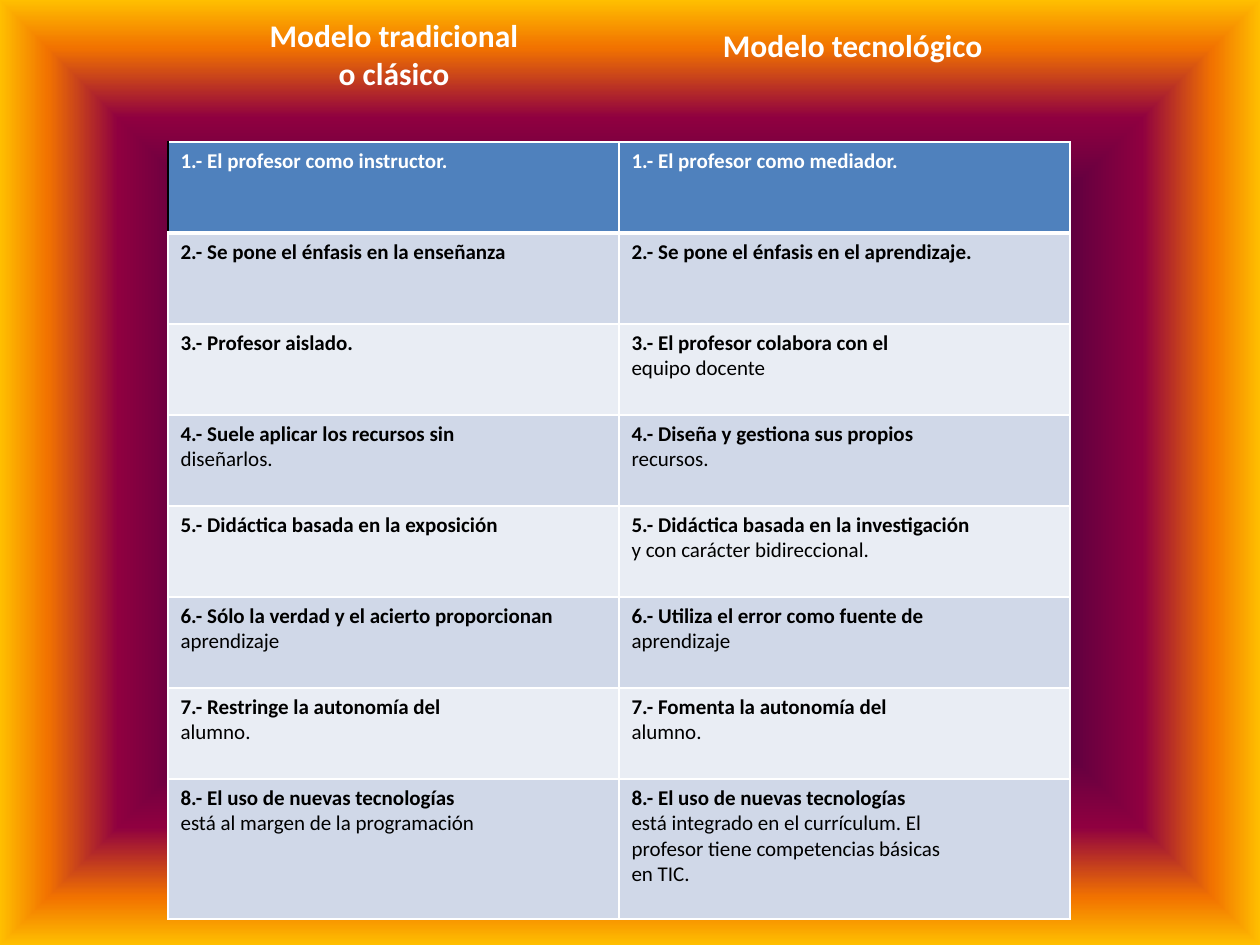
import pptx
import pptx.util
import pptx.dml.color
import pptx.enum.text
import pptx.oxml
import pptx.oxml.ns

HUES = {
    "white": "FFFFFF",
    "black": "000000",
    "head": "4F81BD",
    "dark": "D0D8E8",
    "light": "E9EDF4",
}
STOPS = [(0, "000000"), (20, "000040"), (50, "400040"),
         (75, "8F0040"), (90, "F27300"), (100, "FFBF00")]
TITLES = [
    (["Modelo tradicional", "o clásico"], (168, 10, 452, 89), "CENTER"),
    (["Modelo tecnológico"], (601, 20, 394, 50), "RIGHT"),
]
ROWS = [
    (["1.- El profesor como instructor."],
     ["1.- El profesor como mediador."]),
    (["2.- Se pone el énfasis en la enseñanza"],
     ["2.- Se pone el énfasis en el aprendizaje."]),
    (["3.- Profesor aislado."],
     ["3.- El profesor colabora con el", "equipo docente"]),
    (["4.- Suele aplicar los recursos sin", "diseñarlos."],
     ["4.- Diseña y gestiona sus propios", "recursos."]),
    (["5.- Didáctica basada en la exposición"],
     ["5.- Didáctica basada en la investigación",
      "y con carácter bidireccional."]),
    (["6.- Sólo la verdad y el acierto proporcionan", "aprendizaje"],
     ["6.- Utiliza el error como fuente de", "aprendizaje"]),
    (["7.- Restringe la autonomía del", "alumno."],
     ["7.- Fomenta la autonomía del", "alumno."]),
    (["8.- El uso de nuevas tecnologías",
      "está al margen de la programación"],
     ["8.- El uso de nuevas tecnologías",
      "está integrado en el currículum. El",
      "profesor tiene competencias básicas", "en TIC."]),
]
LEFT, TOP, WIDE, HIGH, LAST = 168, 142, 451, 91, 140
NS = pptx.oxml.ns.nsdecls("a")


def px(num):
    return pptx.util.Emu(round(num * 914400 / 126))


def rgb(name):
    return pptx.dml.color.RGBColor.from_string(HUES[name])


def write(frame, lines, size=12, hue="black", bold=1, align="LEFT"):
    frame.word_wrap = True
    for num, line in enumerate(lines):
        para = frame.paragraphs[0] if num == 0 else frame.add_paragraph()
        para.alignment = getattr(pptx.enum.text.PP_ALIGN, align)
        run = para.add_run()
        run.text = line
        run.font.name = "Calibri"
        run.font.size = pptx.util.Pt(size)
        run.font.bold = num < bold
        run.font.color.rgb = rgb(hue)


def edge(cell, sides):
    props = cell._tc.get_or_add_tcPr()
    for num, (side, (hue, wide)) in enumerate(sides.items()):
        props.insert(num, pptx.oxml.parse_xml(
            f'<a:ln{side} {NS} w="{wide * 12700}"><a:solidFill>'
            f'<a:srgbClr val="{HUES[hue]}"/></a:solidFill></a:ln{side}>'))


def paint(slide):
    slide.background.fill.solid()
    back = slide.element.find(".//" + pptx.oxml.ns.qn("p:bgPr"))
    stops = "".join(f'<a:gs pos="{pos * 1000}"><a:srgbClr val="{hue}"/></a:gs>'
                    for pos, hue in STOPS)
    back.replace(back[0], pptx.oxml.parse_xml(
        f'<a:gradFill {NS} rotWithShape="1"><a:gsLst>{stops}</a:gsLst>'
        '<a:path path="shape"><a:fillToRect l="50000" t="50000" '
        'r="50000" b="50000"/></a:path></a:gradFill>'))


def main():
    deck = pptx.Presentation()
    deck.slide_width, deck.slide_height = px(1260), px(945)
    slide = deck.slides.add_slide(deck.slide_layouts[6])
    paint(slide)

    full = HIGH * (len(ROWS) - 1) + LAST
    table = slide.shapes.add_table(
        len(ROWS), 2, px(LEFT), px(TOP), px(2 * WIDE), px(full)).table
    for col in table.columns:
        col.width = px(WIDE)
    for r, row in enumerate(ROWS):
        table.rows[r].height = px(LAST if r == len(ROWS) - 1 else HIGH)
        for c, lines in enumerate(row):
            cell = table.cell(r, c)
            cell.fill.solid()
            cell.fill.fore_color.rgb = rgb(
                "head" if r == 0 else "dark" if r % 2 else "light")
            write(cell.text_frame, lines, hue="black" if r else "white")
            edge(cell, {
                "L": ("white" if r or c else "black", 1),
                "R": ("white", 1),
                "T": ("white", 3 if r == 1 else 1),
                "B": ("white", 1 if r else 3),
            })

    for lines, box, align in TITLES:
        title = slide.shapes.add_textbox(*map(px, box))
        write(title.text_frame, lines, size=18, hue="white",
              bold=len(lines), align=align)
        title.text_frame.auto_size = (
            pptx.enum.text.MSO_AUTO_SIZE.SHAPE_TO_FIT_TEXT)

    deck.save("out.pptx")


if __name__ == "__main__":
    main()
